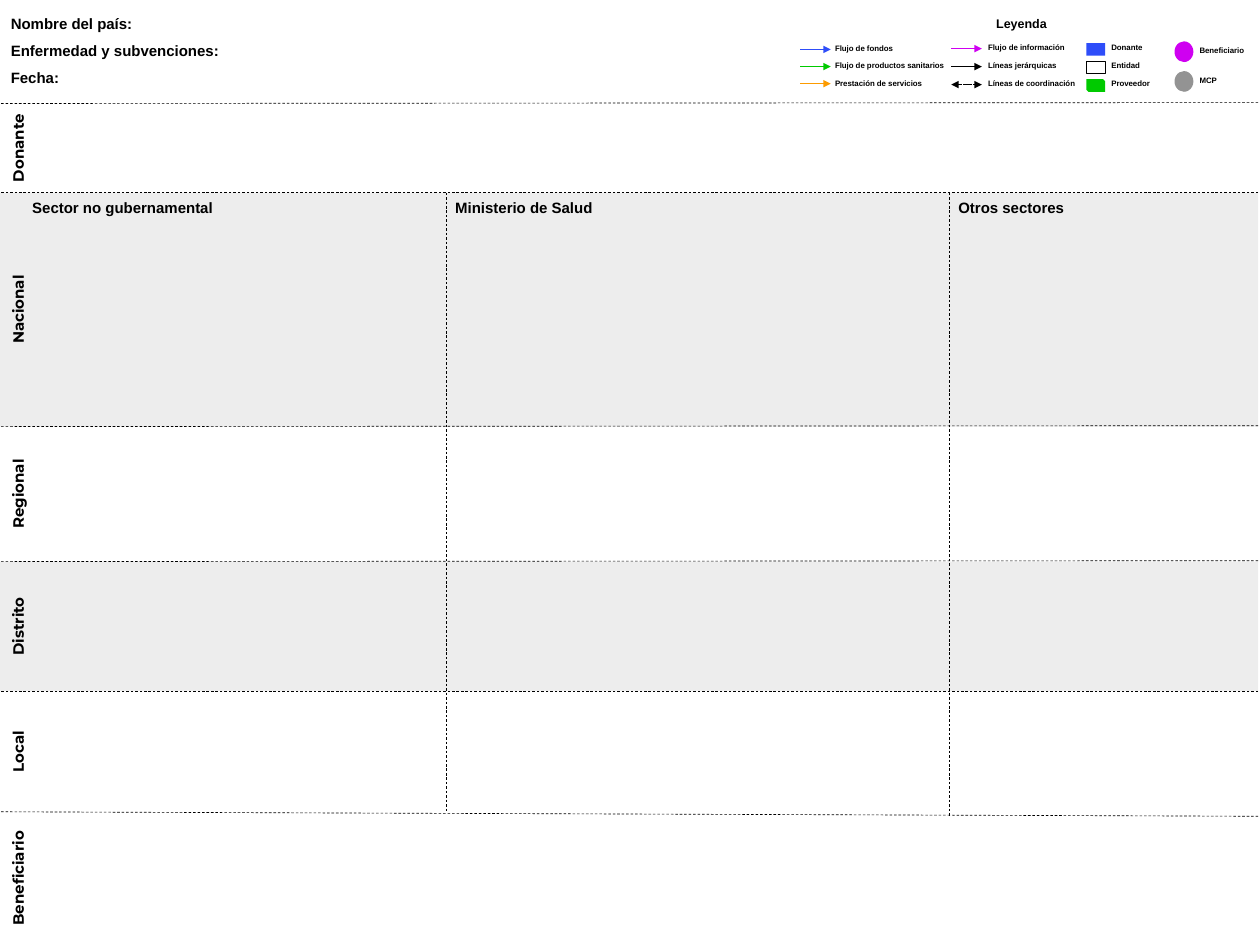
from itertools import pairwise

from lxml.etree import SubElement
from pptx import Presentation
from pptx.dml.color import RGBColor
from pptx.enum.dml import MSO_LINE as Dash
from pptx.enum.shapes import MSO_CONNECTOR as Conn, MSO_SHAPE as Shape
from pptx.enum.text import MSO_ANCHOR as Anchor, MSO_AUTO_SIZE as Auto, PP_ALIGN as Align
from pptx.oxml.ns import qn
from pptx.util import Inches, Pt

BLACK = RGBColor(0x00, 0x00, 0x00)
BLUE = RGBColor(0x2E, 0x4D, 0xF9)
GREEN = RGBColor(0x00, 0xCA, 0x00)
ORANGE = RGBColor(0xFC, 0x9B, 0x00)
PURPLE = RGBColor(0xCF, 0x00, 0xF1)
GRAY = RGBColor(0x93, 0x93, 0x93)

HEAD = {"name": "Arial", "size": Pt(12), "bold": True}
SIDE = {**HEAD, "name": "Montserrat"}
TITLE = {**HEAD, "size": Pt(10)}
SMALL = {**HEAD, "size": Pt(6.3)}
MIDDLE = {"vertical_anchor": Anchor.MIDDLE}
GROW = {"auto_size": Auto.SHAPE_TO_FIT_TEXT}
FIELD = {"margin_left": Inches(0.12), "margin_right": Inches(0.39),
         "word_wrap": False, **GROW}

FIELDS = ["Nombre del país:", "Enfermedad y subvenciones:", "Fecha:"]
LEVELS = ["Donante", "Nacional", "Regional", "Distrito", "Local", "Beneficiario"]
RULES = [(1.15, 1.14), (2.14, 2.14), (4.74, 4.73), (6.24, 6.23), (7.68, 7.68), (9.02, 9.07)]
SECTORS = [("Sector no gubernamental", 0.28, None),
           ("Ministerio de Salud", 4.98, 9.02),
           ("Otros sectores", 10.57, 9.07)]
ARROWS = [
    (0.01, 0.42, 0.19, 0.29, 1.5, [
        ("Flujo de fondos", BLUE, False),
        ("Flujo de productos sanitarios", GREEN, False),
        ("Prestación de servicios", ORANGE, False)]),
    (1.69, 0.41, 0.2, 0.31, 1.21, [
        ("Flujo de información", PURPLE, False),
        ("Líneas jerárquicas", BLACK, False),
        ("Líneas de coordinación", BLACK, True)]),
]
SYMBOLS = [
    (3.19, 0.35, 0.2, 0.14, 0.18, -0.05, [
        ("Donante", Shape.RECTANGLE, BLUE),
        ("Entidad", Shape.RECTANGLE, None),
        ("Proveedor", Shape.SNIP_2_DIAG_RECTANGLE, GREEN)]),
    (4.17, 0.33, 0.33, 0.23, 0.18, 0, [
        ("Beneficiario", Shape.OVAL, PURPLE),
        ("MCP", Shape.OVAL, GRAY)]),
]


def apply(obj, fmt):
    """Set each attribute named in the dict."""
    for key, val in fmt.items():
        setattr(obj, key, val)


def write(slide, box, lines, font, frame, para=None):
    """Add a text box with one paragraph per line."""
    shape = slide.shapes.add_textbox(*map(Inches, box))
    text = shape.text_frame
    apply(text, {"word_wrap": True, **frame})
    text.text = "\n".join(lines)
    for par in text.paragraphs:
        apply(par, para or {})
        apply(par.font, font)
        par.font.color.rgb = BLACK
    return shape


def draw(slide, kind, ends, color, width, dash=None, tips=()):
    """Add a line with optional dashes and arrowheads."""
    line = slide.shapes.add_connector(kind, *map(Inches, ends))
    line.line.color.rgb = color
    apply(line.line, {"width": Pt(width), "dash_style": dash})
    for tip in tips:
        SubElement(line.line._get_or_add_ln(), qn(tip)).set("type", "triangle")
    SubElement(line._element.spPr, qn("a:effectLst"))


def block(slide, kind, box, fill):
    """Add a filled shape, or an outlined one when no fill is given."""
    shape = slide.shapes.add_shape(kind, *map(Inches, box))
    shape.shadow.inherit = False
    if fill is None:
        shape.fill.background()
        shape.line.color.rgb = BLACK
        shape.line.width = Pt(0.5)
    else:
        shape.fill.solid()
        shape.fill.fore_color.rgb = fill
        shape.line.fill.background()
    return shape


def shade(slide, box):
    """Tint a band with faint black."""
    shape = block(slide, Shape.RECTANGLE, box, BLACK)
    tint = next(shape._element.spPr.iter(qn("a:srgbClr")))
    SubElement(tint, qn("a:alpha")).set("val", "7000")


def levels(slide, box):
    """Draw the bands, their dashed rules and upright names."""
    left, top, width, height = box
    tops = [top + start for start, _ in RULES]
    for num in (1, 3):
        shade(slide, (left, tops[num], width, tops[num + 1] - tops[num]))
    for start, end in RULES:
        draw(slide, Conn.STRAIGHT, (left + width, top + end, left, top + start),
             BLACK, 0.5, Dash.DASH)
    for name, (start, end) in zip(LEVELS, pairwise(tops + [top + height])):
        size = end - start
        spot = (left + 0.22 - size / 2, (start + end) / 2 - 0.2, size, 0.4)
        label = write(slide, spot, [name], SIDE, MIDDLE, {"alignment": Align.CENTER})
        label.rotation = 270


def sectors(slide, box):
    """Draw the sector headings and the dashed lines between them."""
    left, top, _, _ = box
    for name, shift, end in SECTORS:
        spot = left + shift
        write(slide, (spot, top + 0.02, 2.23, 0.3), [name], HEAD, GROW)
        if end:
            draw(slide, Conn.STRAIGHT, (spot, top, spot, end), BLACK, 0.5, Dash.DASH)


def legend(slide, box):
    """Draw the legend title, arrows and symbols."""
    left, top, width, _ = box
    write(slide, (left, top, width, 0.27), ["Leyenda"], TITLE, MIDDLE,
          {"alignment": Align.CENTER})
    for col, first, gap, shift, wide, items in ARROWS:
        for num, (name, color, both) in enumerate(items):
            x, y = left + col, top + first + num * gap
            tips = ("a:headEnd", "a:tailEnd") if both else ("a:tailEnd",)
            draw(slide, Conn.ELBOW, (x, y, x + 0.34, y), color, 1,
                 Dash.SQUARE_DOT if both else None, tips)
            write(slide, (x + shift, y - 0.11, wide, 0.21), [name], SMALL, GROW)
    for col, first, gap, tall, shift, lift, items in SYMBOLS:
        for num, (name, kind, fill) in enumerate(items):
            x, y = left + col, top + first + num * gap
            block(slide, kind, (x, y, 0.21, tall), fill)
            write(slide, (x + shift, y + lift, 0.78, 0.21), [name], SMALL, GROW)


def main():
    """Build the slide and save it."""
    deck = Presentation()
    apply(deck, {"slide_width": Inches(14), "slide_height": Inches(10.5)})
    slide = deck.slides.add_slide(deck.slide_layouts[6])
    levels(slide, (-0.02, 0, 14, 10.5))
    sectors(slide, (-0.02, 2.14, 14, 6.93))
    write(slide, (0, 0.01, 3.7, 1.35), FIELDS, HEAD, FIELD, {"line_spacing": 1.5})
    legend(slide, (8.88, 0.13, 4.94, 0.9))
    deck.save("out.pptx")


if __name__ == "__main__":
    main()
